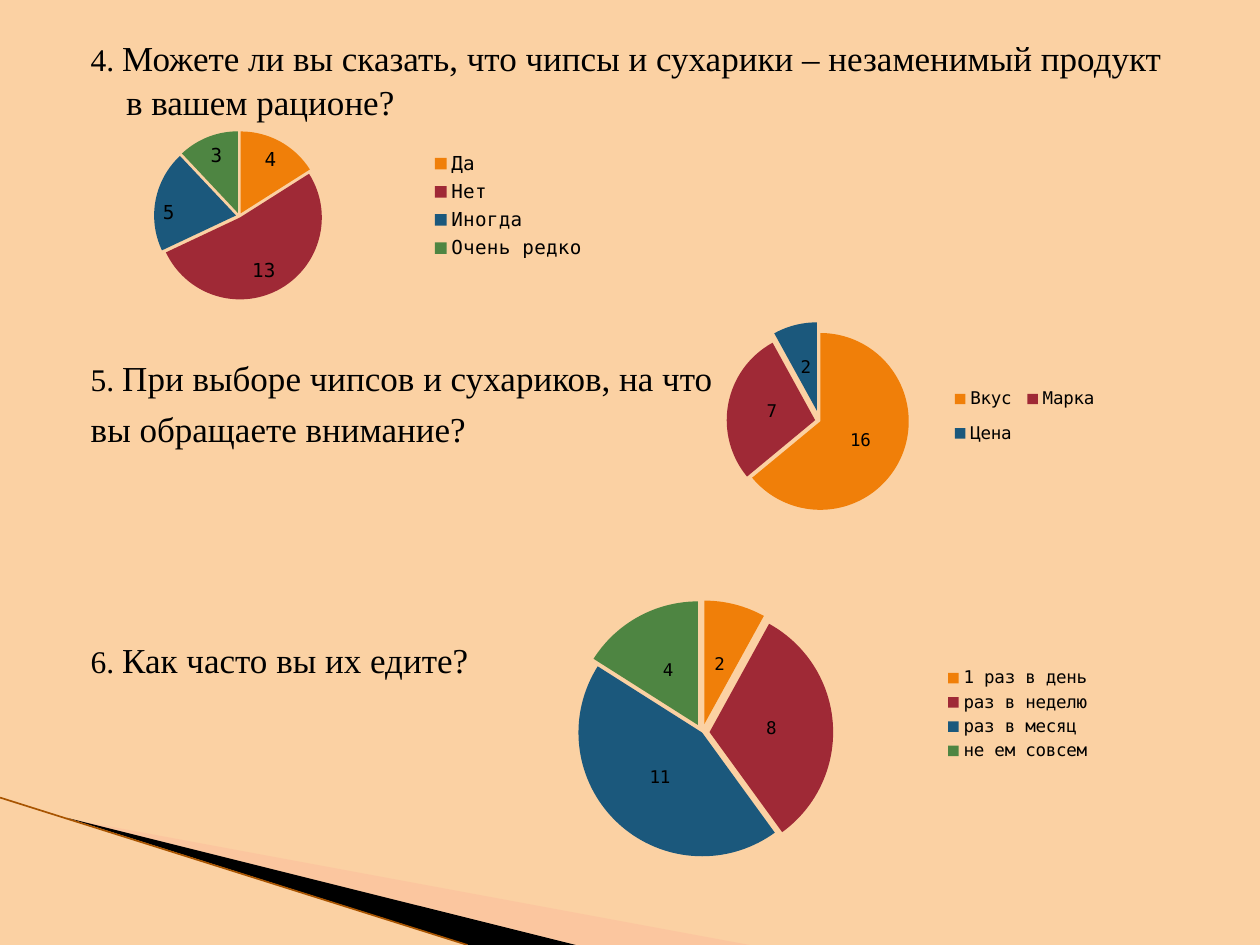
from lxml import etree
from pptx import Presentation
from pptx.chart.data import CategoryChartData
from pptx.dml.color import RGBColor
from pptx.enum.chart import XL_CHART_TYPE, XL_LABEL_POSITION as Pos, XL_LEGEND_POSITION as Side
from pptx.enum.shapes import MSO_CONNECTOR as Link
from pptx.enum.text import MSO_ANCHOR, MSO_AUTO_SIZE
from pptx.oxml import parse_xml
from pptx.oxml.ns import nsdecls, qn
from pptx.util import Inches, Pt

HUES = {"sand": "FBD1A3", "peach": "FCB79B", "black": "000000", "brown": "A85400",
        "orange": "F07F09", "red": "9F2936", "blue": "1B587C", "green": "4E8542"}
SLICES = ["orange", "red", "blue", "green"]


def hue(name):
    return RGBColor.from_string(HUES[name])


def place(node, box):
    """Give a plot area or legend a fixed box, in shares of the chart."""
    inner = '<c:layoutTarget val="inner"/>' if node.tag == qn("c:plotArea") else ""
    modes = '<c:xMode val="edge"/><c:yMode val="edge"/>'
    sizes = "".join(f'<c:{k} val="{v}"/>' for k, v in zip("xywh", box))
    for old in node.findall(qn("c:layout")):
        node.remove(old)
    new = parse_xml(f'<c:layout {nsdecls("c")}><c:manualLayout>{inner}{modes}{sizes}'
                    '</c:manualLayout></c:layout>')
    node.insert(0 if inner else 1, new)


deck = Presentation()
deck.slide_width, deck.slide_height = Inches(10), Inches(7.5)
slide = deck.slides.add_slide(deck.slide_layouts[1])
shapes = slide.shapes
title = shapes.title.element
title.getparent().remove(title)
fill = slide.background.fill
fill.solid()
fill.fore_color.rgb = hue("sand")

# Corner wedges and the thin line along them
wedges = [("peach", 40, [(0.55, 6.5), (5.95, 7.5), (4.56, 7.5)]),
          ("black", 100, [(0.53, 6.49), (4.57, 7.5), (3.72, 7.5)])]
for name, alpha, dots in wedges:
    pen = shapes.build_freeform(*map(Inches, dots[0]))
    pen.add_line_segments([tuple(map(Inches, dot)) for dot in dots[1:]])
    wedge = pen.convert_to_shape()
    wedge.shadow.inherit = False
    wedge.fill.solid()
    wedge.fill.fore_color.rgb = hue(name)
    wedge.line.fill.background()
    tint = wedge.fill._xPr.find(".//" + qn("a:srgbClr"))
    etree.SubElement(tint, qn("a:alpha"), val=str(alpha * 1000))
edge = shapes.add_connector(Link.STRAIGHT, 0, Inches(6.33), Inches(3.71), Inches(7.5))
edge.line.color.rgb = hue("brown")
edge.line.width = Pt(0.95)
etree.SubElement(edge.element.spPr, qn("a:effectLst"))

# Questions: number, wording, space before
asks = [("4. ", "Можете ли вы сказать, что чипсы и сухарики – незаменимый продукт в вашем рационе?", 0),
        ("5. ", "При выборе чипсов и сухариков, на что", 133),
        ("", "вы обращаете внимание?", 4),
        ("6. ", "Как часто вы их едите?", 107)]
body = slide.placeholders[1]
body.left, body.top, body.width, body.height = map(Inches, (0.5, 0.23, 9, 7.11))
shapes._spTree.append(body.element)
frame = body.text_frame
frame.word_wrap = True
frame.auto_size = MSO_AUTO_SIZE.NONE
frame.vertical_anchor = MSO_ANCHOR.TOP
for i, (mark, words, gap) in enumerate(asks):
    para = frame.paragraphs[0] if i == 0 else frame.add_paragraph()
    form = para._p.get_or_add_pPr()
    form.set("marL", str(Inches(0.4)))
    form.set("indent", str(Inches(-0.28)))
    etree.SubElement(form, qn("a:buNone"))
    para.space_before = Pt(gap)
    para.line_spacing = 1.04
    for text, size in ((mark, 18), (words, 20)):
        if text:
            run = para.add_run()
            run.text = text
            run.font.size = Pt(size)
            run.font.name = "Times New Roman"
            run.font.color.rgb = hue("black")

# Pies: box, font size, answers, series burst, slice bursts, plot, legend, label place
pies = [
    ((0.39, 0.62, 4.34, 2.03), 11, {"Да": 4, "Нет": 13, "Иногда": 5, "Очень редко": 3},
     25, [4, 2, 4, 4], (0.16, 0.14, 0.375, 0.8), (0.69, 0.27, 0.3, 0.46), Pos.INSIDE_END),
    ((5.47, 2.27, 3.83, 1.95), 10, {"Вкус": 16, "Марка": 7, "Цена": 2},
     25, [1, 5, 12], (0, 0.1, 0.54, 0.9), (0.53, 0.36, 0.33, 0.34), Pos.CENTER),
    ((3.83, 4.38, 4.91, 2.61), 10,
     {"1 раз в день": 2, "раз в неделю": 8, "раз в месяц": 11, "не ем совсем": 4},
     17, [7, 6, 0, 7], (0.12, 0.11, 0.47, 0.88), (0.74, 0.34, 0.25, 0.31), Pos.CENTER)]
for box, size, votes, burst, parts, plot, key, spot in pies:
    data = CategoryChartData()
    data.categories = list(votes)
    data.add_series("Series 1", list(votes.values()))
    chart = shapes.add_chart(XL_CHART_TYPE.PIE, *map(Inches, box), data).chart
    chart.has_title = False
    chart.font.size = Pt(size)
    chart.font.name = "DejaVu Sans Mono"
    chart.font.color.rgb = hue("black")
    chart.has_legend = True
    chart.legend.position = Side.RIGHT
    chart.legend.include_in_layout = False
    place(chart._chartSpace.find(".//" + qn("c:plotArea")), plot)
    place(chart.legend._element, key)
    pie = chart.plots[0]
    pie.vary_by_categories = True
    pie.has_data_labels = True
    pie.data_labels.show_value = True
    pie.data_labels.show_percentage = False
    pie.data_labels.position = spot
    series = pie.series[0]
    for i, (part, name) in enumerate(zip(parts, SLICES)):
        look = series.points[i].format
        look.fill.solid()
        look.fill.fore_color.rgb = hue(name)
        look.line.fill.background()
    slots = series._element.findall(qn("c:dPt"))
    for slot, part in zip(slots, parts):
        away = etree.Element(qn("c:explosion"), val=str(part))
        slot.find(qn("c:spPr")).addprevious(away)
    slots[0].addprevious(etree.Element(qn("c:explosion"), val=str(burst)))

deck.save("out.pptx")
